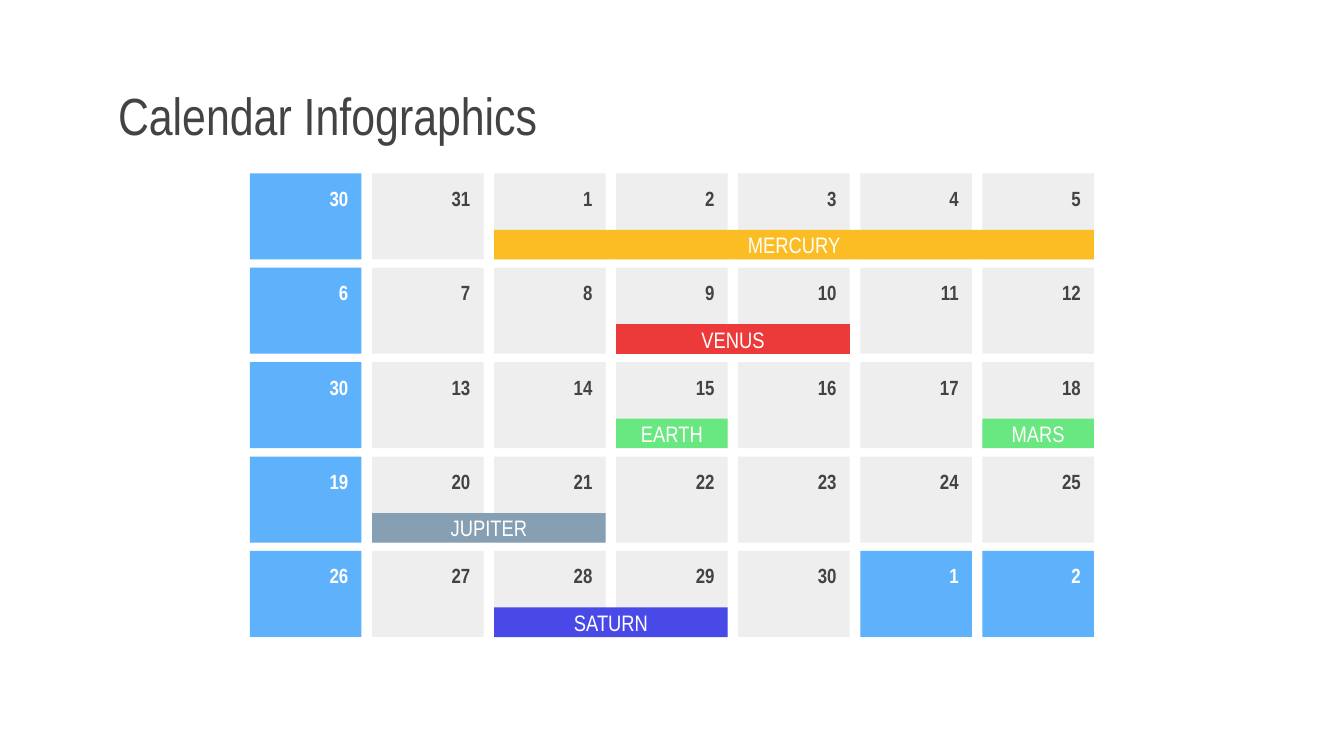
from dataclasses import dataclass
from typing import Any

import pptx
import pptx.dml.color
import pptx.enum.shapes
import pptx.enum.text
import pptx.util

Inches = pptx.util.Inches
Pt = pptx.util.Pt
Align = pptx.enum.text.PP_ALIGN
Anchor = pptx.enum.text.MSO_ANCHOR

COLORS = {
    "ink": "434343",
    "white": "FFFFFF",
    "weekday": "EEEEEE",
    "highlight": "5EB2FC",
    "yellow": "FCBD24",
    "red": "EC3A3B",
    "green": "69E781",
    "slate": "869FB2",
    "indigo": "4949E7",
}
FONT = "Arial Narrow"

SLIDE_WIDTH = 10
SLIDE_HEIGHT = SLIDE_WIDTH * 9 / 16
GRID_LEFT, GRID_TOP = 1.86, 1.29
DAY_WIDTH, DAY_HEIGHT = 0.83, 0.64
COLUMN_STEP = (7.31 - GRID_LEFT) / 6
ROW_STEP = (4.10 - GRID_TOP) / 4
DATE_WIDTH, DATE_HEIGHT = 0.47, 0.31
EVENT_HEIGHT = 0.22

WEEKS = [
    [30, 31, 1, 2, 3, 4, 5],
    [6, 7, 8, 9, 10, 11, 12],
    [30, 13, 14, 15, 16, 17, 18],
    [19, 20, 21, 22, 23, 24, 25],
    [26, 27, 28, 29, 30, 1, 2],
]
NEXT_MONTH_DAYS = {(4, 5), (4, 6)}


@dataclass(frozen=True)
class Box:
    left: float
    top: float
    width: float
    height: float

    def lengths(self) -> list[int]:
        return [Inches(n) for n in (self.left, self.top, self.width, self.height)]


@dataclass(frozen=True)
class TextStyle:
    size: float
    color: str
    bold: bool = False
    align: Any = Align.LEFT
    anchor: Any = Anchor.TOP
    space_after: float = 0


@dataclass(frozen=True)
class Event:
    name: str
    week: int
    first_column: int
    last_column: int
    color: str


EVENTS = [
    Event("MERCURY", 0, 2, 6, "yellow"),
    Event("VENUS", 1, 3, 4, "red"),
    Event("EARTH", 2, 3, 3, "green"),
    Event("MARS", 2, 6, 6, "green"),
    Event("JUPITER", 3, 1, 2, "slate"),
    Event("SATURN", 4, 2, 3, "indigo"),
]
TITLE_STYLE = TextStyle(28, "ink", anchor=Anchor.MIDDLE)
EVENT_STYLE = TextStyle(12, "white", align=Align.CENTER, anchor=Anchor.MIDDLE)


def rgb(name: str) -> pptx.dml.color.RGBColor:
    return pptx.dml.color.RGBColor.from_string(COLORS[name])


def apply(target: Any, values: dict[str, Any]) -> None:
    """Set every attribute named in values on target."""
    for attribute, value in values.items():
        setattr(target, attribute, value)


def write(holder: Any, wording: str, style: TextStyle) -> None:
    frame = holder.text_frame
    margins = ("margin_left", "margin_top", "margin_right", "margin_bottom")
    apply(frame, dict.fromkeys(margins, Inches(0.1)))
    apply(frame, {"word_wrap": True, "vertical_anchor": style.anchor})
    paragraph = frame.paragraphs[0]
    apply(paragraph, {"alignment": style.align, "space_after": Pt(style.space_after)})
    run = paragraph.add_run()
    run.text = wording
    apply(run.font, {"name": FONT, "size": Pt(style.size), "bold": style.bold})
    run.font.color.rgb = rgb(style.color)


def add_label(slide: Any, box: Box, wording: str, style: TextStyle) -> None:
    write(slide.shapes.add_textbox(*box.lengths()), wording, style)


def add_block(slide: Any, box: Box, color: str) -> Any:
    block = slide.shapes.add_shape(
        pptx.enum.shapes.MSO_SHAPE.RECTANGLE, *box.lengths()
    )
    block.shadow.inherit = False
    block.fill.solid()
    block.fill.fore_color.rgb = rgb(color)
    block.line.fill.background()
    return block


def day_box(week: int, column: int) -> Box:
    return Box(
        GRID_LEFT + column * COLUMN_STEP,
        GRID_TOP + week * ROW_STEP,
        DAY_WIDTH,
        DAY_HEIGHT,
    )


def add_day(slide: Any, week: int, column: int, date: int) -> None:
    highlighted = column == 0 or (week, column) in NEXT_MONTH_DAYS
    day = day_box(week, column)
    add_block(slide, day, "highlight" if highlighted else "weekday")
    date_box = Box(
        day.left + DAY_WIDTH - DATE_WIDTH, day.top, DATE_WIDTH, DATE_HEIGHT
    )
    date_style = TextStyle(
        11,
        "white" if highlighted else "ink",
        bold=True,
        align=Align.RIGHT,
        space_after=16,
    )
    add_label(slide, date_box, str(date), date_style)


def add_event(slide: Any, event: Event) -> None:
    """Draw a bar along the bottom of the days the event covers."""
    first = day_box(event.week, event.first_column)
    last = day_box(event.week, event.last_column)
    bar = Box(
        first.left,
        first.top + DAY_HEIGHT - EVENT_HEIGHT,
        last.left + DAY_WIDTH - first.left,
        EVENT_HEIGHT,
    )
    write(add_block(slide, bar, event.color), event.name, EVENT_STYLE)


def main() -> None:
    deck = pptx.Presentation()
    slide_size = {
        "slide_width": Inches(SLIDE_WIDTH),
        "slide_height": Inches(SLIDE_HEIGHT),
    }
    apply(deck, slide_size)
    slide = deck.slides.add_slide(deck.slide_layouts[6])

    add_label(slide, Box(0.78, 0.59, 8.45, 0.53), "Calendar Infographics", TITLE_STYLE)
    for week, dates in enumerate(WEEKS):
        for column, date in enumerate(dates):
            add_day(slide, week, column, date)
    for event in EVENTS:
        add_event(slide, event)

    deck.save("out.pptx")


if __name__ == "__main__":
    main()
